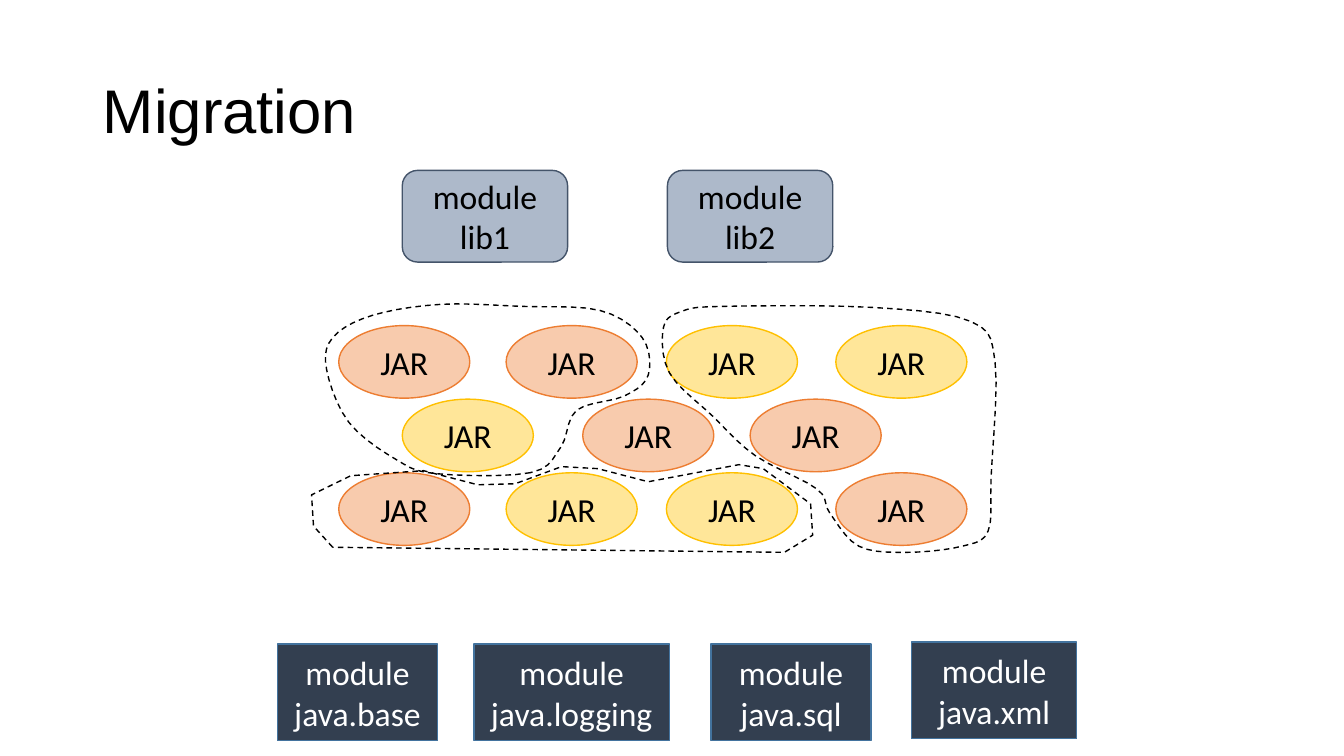
from dataclasses import dataclass
from pptx import Presentation, util as u
from pptx.dml.color import RGBColor
from pptx.enum import dml, shapes, text

# Content
TITLE = "Migration"
OUTER_COLUMNS = (3.36, 5.02, 6.61, 8.29)
INNER_COLUMNS = (3.99, 5.78, 7.44)
JAR_ROWS = [
    (OUTER_COLUMNS, ("orange", "orange", "yellow", "yellow")),
    (INNER_COLUMNS, ("yellow", "orange", "orange")),
    (OUTER_COLUMNS, ("orange", "yellow", "yellow", "orange")),
]
LIBRARIES = ["lib1", "lib2"]
JAVA_MODULES = [  # name, left, top, width
    ("java.base", 2.75, 6.39, 1.59),
    ("java.logging", 4.7, 6.39, 1.94),
    ("java.sql", 7.05, 6.39, 1.59),
    ("java.xml", 9.04, 6.37, 1.64),
]
GROUPS = [  # steps per curve, corner points
    (5, [(5.26, 4.69), (4.33, 4.7), (3.93, 4.56), (3.46, 4.19), (3.24, 3.67),
         (3.3, 3.35), (3.69, 3.13), (4.37, 3.02), (5.17, 3.04), (5.95, 3.08),
         (6.37, 3.35), (6.43, 3.72), (6.19, 3.93), (5.72, 4.07),
         (5.56, 4.44)]),
    (5, [(8.23, 5.09), (8.1, 4.85), (7.49, 4.52), (7.07, 4.13), (6.64, 3.7),
         (6.58, 3.25), (6.76, 3.09), (7.17, 3.04), (8.65, 3.05), (9.63, 3.19),
         (9.87, 3.6), (9.83, 4.74), (9.8, 5.27), (9.54, 5.42), (9, 5.48),
         (8.52, 5.42)]),
    (1, [(3.3, 5.43), (3.11, 5.22), (3.09, 4.91), (3.48, 4.72), (4.2, 4.67),
         (4.74, 4.81), (5.11, 4.8), (5.57, 4.63), (5.93, 4.65), (6.43, 4.78),
         (7.33, 4.61), (7.57, 4.65), (8.04, 5), (8.06, 5.31), (7.78, 5.48)]),
]

# Grid, in inches
JAR_TOP, JAR_PITCH, JAR_SIZE = 3.23, 0.73, (1.3, 0.72)
LIBRARY_LEFT, LIBRARY_PITCH = 3.99, 2.63
LIBRARY_TOP, LIBRARY_SIZE = 1.69, (1.64, 0.91)
MODULE_HEIGHT = 0.96


@dataclass(frozen=True)
class Theme:
    title_font: str = "Arial"
    body_font: str = "Calibri"
    title_size: int = 44
    body_size: int = 24
    line_width: int = 1
    black: str = "000000"
    white: str = "FFFFFF"
    orange: tuple = ("F8CBAD", "ED7D31")
    yellow: tuple = ("FFE699", "FFC000")
    library: tuple = ("ADB9CA", "44546A")
    module: tuple = ("333F50", "43739E")


THEME = Theme()


def write(shape, paragraphs, font=THEME.body_font, size=THEME.body_size,
          color=THEME.black, align=text.PP_ALIGN.CENTER, spacing=None):
    frame = shape.text_frame
    frame.word_wrap = True
    frame.auto_size = text.MSO_AUTO_SIZE.NONE
    frame.vertical_anchor = text.MSO_ANCHOR.MIDDLE
    for index, words in enumerate(paragraphs):
        paragraph = frame.add_paragraph() if index else frame.paragraphs[0]
        paragraph.text = words
        paragraph.alignment = align
        paragraph.line_spacing = spacing
        for run in paragraph.runs:
            run.font.name = font
            run.font.size = u.Pt(size)
            run.font.color.rgb = RGBColor.from_string(color)


def outline(shape, color):
    shape.shadow.inherit = False
    shape.line.color.rgb = RGBColor.from_string(color)
    shape.line.width = u.Pt(THEME.line_width)


def add_box(slide, kind, position, size, colors, paragraphs, **text_format):
    shape = slide.shapes.add_shape(kind, *map(u.Inches, (*position, *size)))
    fill, line = colors
    shape.fill.solid()
    shape.fill.fore_color.rgb = RGBColor.from_string(fill)
    outline(shape, line)
    write(shape, paragraphs, **text_format)


def smooth_loop(points, steps):
    """Closed Catmull-Rom curve through the points."""
    curve = []
    for index in range(len(points)):
        neighbours = [points[(index + offset) % len(points)]
                      for offset in (-1, 0, 1, 2)]
        for step in range(steps):
            t = step / steps
            curve.append(tuple(
                b + t / 2 * (c - a + t * (2 * a - 5 * b + 4 * c - d
                                          + t * (3 * (b - c) + d - a)))
                for a, b, c, d in zip(*neighbours)))
    return curve


def add_group(slide, points):
    start, *rest = [(u.Inches(x), u.Inches(y)) for x, y in points]
    builder = slide.shapes.build_freeform(*start)
    builder.add_line_segments(rest, close=True)
    shape = builder.convert_to_shape()
    shape.fill.background()
    outline(shape, THEME.black)
    shape.line.dash_style = dml.MSO_LINE.DASH


def main():
    presentation = Presentation()
    presentation.slide_width = u.Inches(13.33)
    presentation.slide_height = u.Inches(7.5)
    slide = presentation.slides.add_slide(presentation.slide_layouts[5])
    kinds = shapes.MSO_SHAPE

    # Title
    title = slide.shapes.title
    title.left, title.top = u.Inches(0.92), u.Inches(0.4)
    title.width, title.height = u.Inches(11.5), u.Inches(1.45)
    write(title, [TITLE], font=THEME.title_font, size=THEME.title_size,
          align=text.PP_ALIGN.LEFT, spacing=0.9)

    # Platform modules
    for name, left, top, width in JAVA_MODULES:
        add_box(slide, kinds.RECTANGLE, (left, top), (width, MODULE_HEIGHT),
                THEME.module, [f"module\n{name}"], color=THEME.white)

    # JAR files
    for row, (columns, colors) in enumerate(JAR_ROWS):
        for left, color in zip(columns, colors):
            add_box(slide, kinds.OVAL, (left, JAR_TOP + row * JAR_PITCH),
                    JAR_SIZE, getattr(THEME, color), ["JAR"])

    # Dashed groups around the JAR files
    for steps, corners in GROUPS:
        add_group(slide, smooth_loop(corners, steps))

    # Library modules
    for column, name in enumerate(LIBRARIES):
        left = LIBRARY_LEFT + column * LIBRARY_PITCH
        add_box(slide, kinds.ROUNDED_RECTANGLE, (left, LIBRARY_TOP),
                LIBRARY_SIZE, THEME.library, ["module", name])

    presentation.save("out.pptx")


if __name__ == "__main__":
    main()
